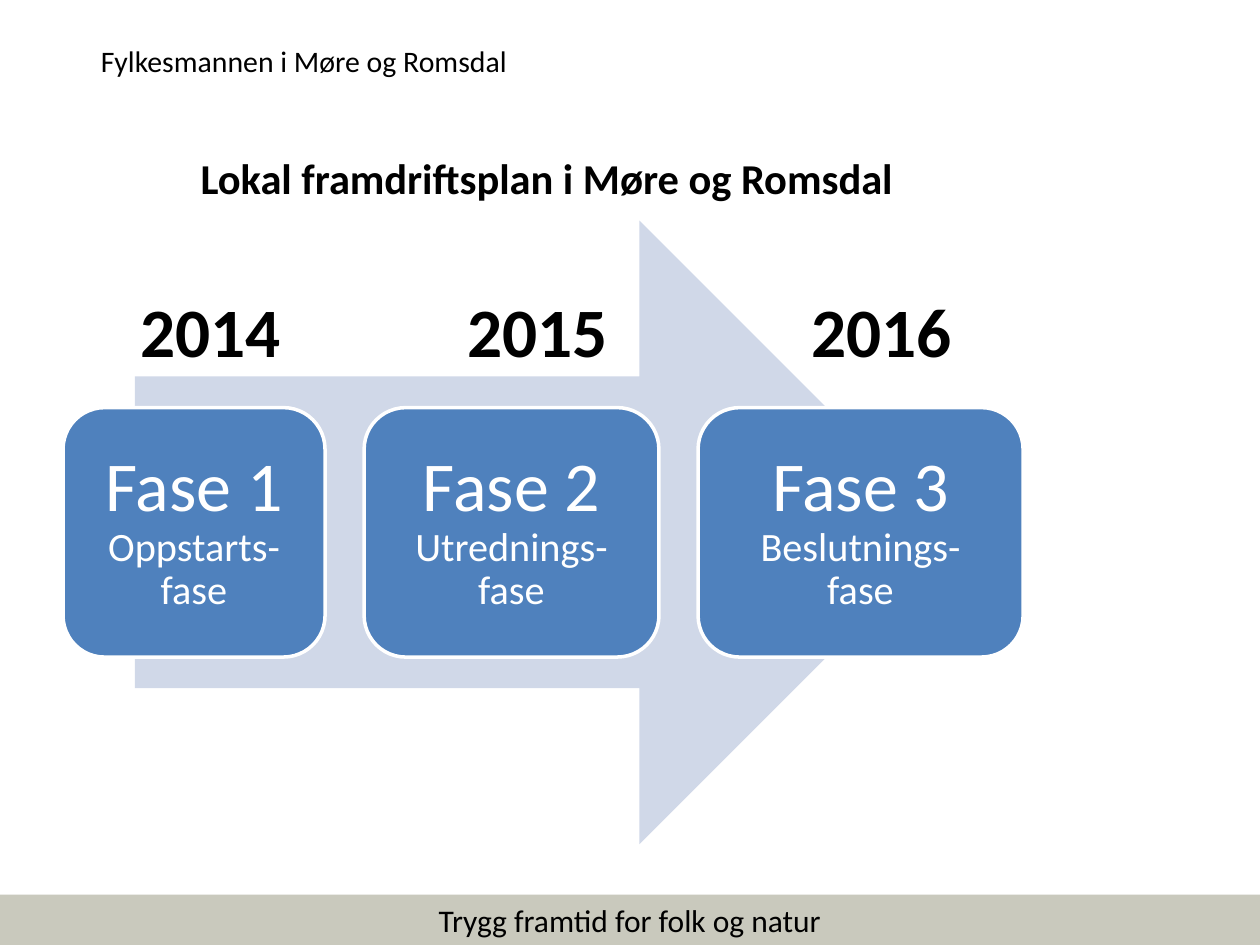
from dataclasses import dataclass

from pptx import Presentation
from pptx.dml.color import RGBColor
from pptx.enum.shapes import MSO_SHAPE
from pptx.enum.text import MSO_ANCHOR, PP_ALIGN
from pptx.util import Inches, Pt

RECT, ROUND, ARROW = MSO_SHAPE.RECTANGLE, MSO_SHAPE.ROUNDED_RECTANGLE, MSO_SHAPE.RIGHT_ARROW
LEFT, CENTER = PP_ALIGN.LEFT, PP_ALIGN.CENTER
MIDDLE = MSO_ANCHOR.MIDDLE


@dataclass(frozen=True)
class Theme:
    """Colours, font and type sizes of the slide."""
    font: str = "Calibri"
    black: str = "000000"
    white: str = "FFFFFF"
    bar: str = "C9C9BD"
    arrow: str = "D0D8E8"
    phase: str = "4F81BD"
    header: float = 17
    footer: float = 18
    title: float = 24.3
    year: float = 39.6
    phase_name: float = 40
    phase_note: float = 23


T = Theme()


def write(tf, lines, color=T.black, bold=False, align=CENTER, spacing=1.0, inset=0.0):
    """Write (text, size) lines as one paragraph with line breaks."""
    tf.word_wrap = True
    tf.vertical_anchor = MIDDLE
    tf.margin_left = tf.margin_right = tf.margin_top = tf.margin_bottom = Inches(inset)
    p = tf.paragraphs[0]
    p.alignment, p.line_spacing = align, spacing
    for i, (text, size) in enumerate(lines):
        if i:
            p.add_line_break()
        r = p.add_run()
        r.text = text
        r.font.name, r.font.size, r.font.bold = T.font, Pt(size), bold
        r.font.color.rgb = RGBColor.from_string(color)


def add_text(s, box, text, size, **fmt):
    """Add a text box with one line of text."""
    tb = s.shapes.add_textbox(*map(Inches, box))
    write(tb.text_frame, [(text, size)], **fmt)


def add_block(s, kind, box, fill, line=None):
    """Add a flat filled shape, outlined if a line colour is given."""
    sp = s.shapes.add_shape(kind, *map(Inches, box))
    sp.shadow.inherit = False
    sp.fill.solid()
    sp.fill.fore_color.rgb = RGBColor.from_string(fill)
    if line:
        sp.line.color.rgb = RGBColor.from_string(line)
        sp.line.width = Pt(2)
    else:
        sp.line.fill.background()
    return sp


def add_header(s, box):
    """Place the sender's name at the top."""
    x, y, w, h = box
    add_text(s, (x + 0.1, y, w - 0.1, h), "Fylkesmannen i Møre og Romsdal", T.header,
             align=LEFT, spacing=0.9)


def add_footer(s, box):
    """Place the footer bar with its motto."""
    sp = add_block(s, RECT, box, T.bar)
    write(sp.text_frame, [("Trygg framtid for folk og natur", T.footer)])


def add_title(s, box, years):
    """Place the heading with a row of (year, centre) labels at the bottom of the box."""
    x, y, w, h = box
    add_text(s, (x, y, w, 0.5), "Lokal framdriftsplan i Møre og Romsdal", T.title, bold=True)
    year_w, year_h = 1.4, 0.7
    for year, center in years:
        add_text(s, (center - year_w / 2, y + h - year_h, year_w, year_h), year, T.year,
                 bold=True)


def add_process(s, box, phases):
    """Place the arrow and the phase boxes centred on its height."""
    x, y, w, h = box
    add_block(s, ARROW, (x + 0.57, y, 6.48, h), T.arrow)
    gap = 0.31
    phase_h = 0.4 * h
    for name, note, phase_w in phases:
        sp = add_block(s, ROUND, (x, y + (h - phase_h) / 2, phase_w, phase_h), T.phase, T.white)
        write(sp.text_frame, [(name, T.phase_name), (note, T.phase_note)],
              color=T.white, spacing=0.9, inset=0.17)
        x += phase_w + gap


def main():
    """Build the slide and save it."""
    prs = Presentation()
    prs.slide_width, prs.slide_height = Inches(10), Inches(7.5)
    s = prs.slides.add_slide(prs.slide_layouts[6])
    add_footer(s, (0, 7.1, 10, 0.4))
    add_header(s, (0.7, 0.3, 3.75, 0.39))
    add_title(s, (0.51, 1.16, 7.66, 1.81), [("2014", 1.67), ("2015", 4.27), ("2016", 7)])
    add_process(s, (0.5, 1.75, 7.63, 4.95), [
        ("Fase 1", "Oppstarts-fase", 2.08),
        ("Fase 2", "Utrednings-fase", 2.34),
        ("Fase 3", "Beslutnings-fase", 2.58),
    ])
    prs.save("out.pptx")


if __name__ == "__main__":
    main()
